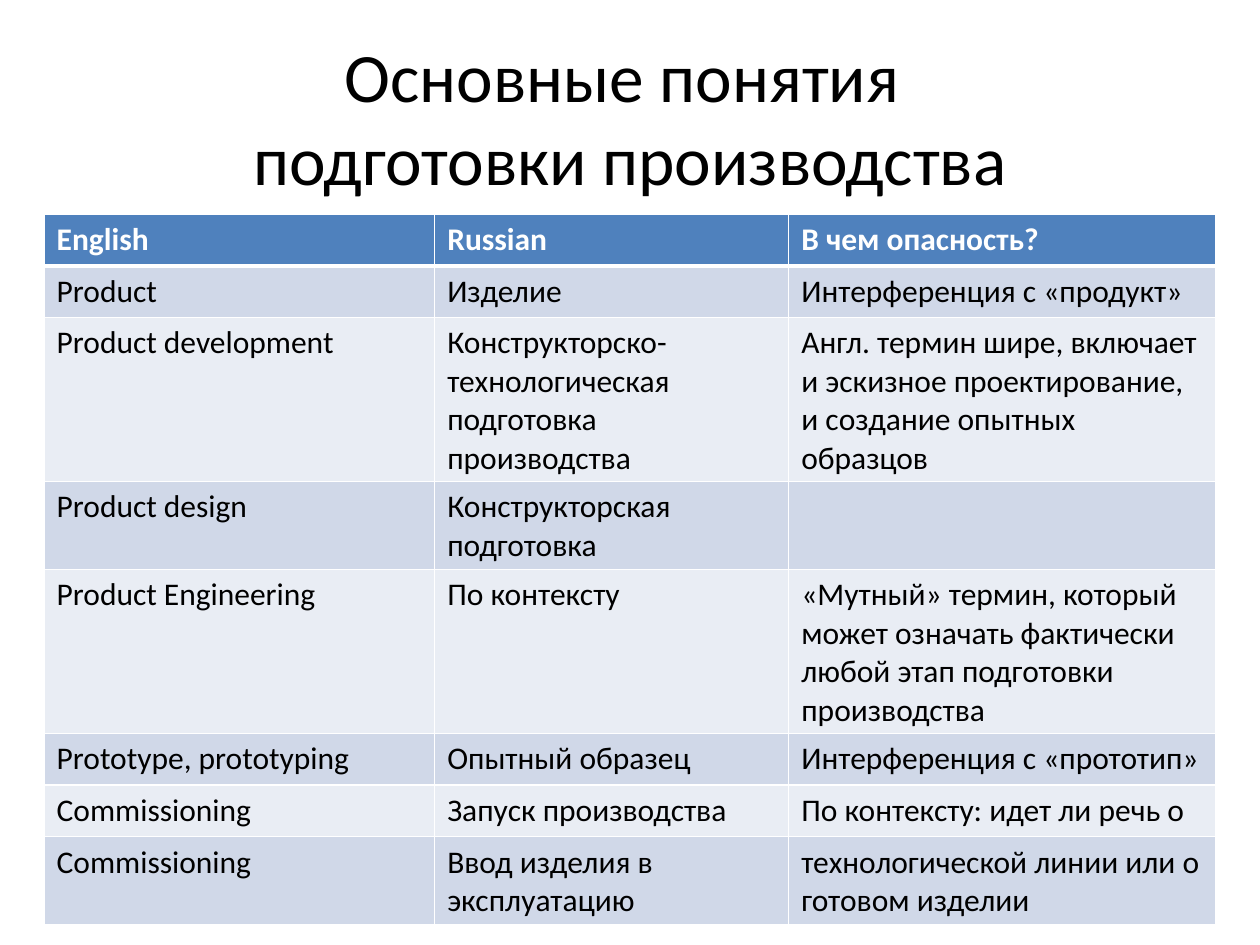
from lxml import etree
from pptx import Presentation
from pptx import util as u
from pptx.dml.color import RGBColor
from pptx.enum import text
from pptx.oxml import ns


def paint(target, color):
    target.solid()
    target.fore_color.rgb = RGBColor.from_string(color)


def style(para, color, **formats):
    para.font.name = "Calibri"
    paint(para.font.fill, color)
    for name, value in formats.items():
        setattr(para.font, name, value)


deck = Presentation()
deck.slide_width = u.Inches(10)
deck.slide_height = u.Inches(7.5)
page = deck.slides.add_slide(deck.slide_layouts[6])

box = page.shapes.add_textbox(u.Inches(0.5), u.Inches(0.3), u.Inches(9), u.Inches(1.25))
frame = box.text_frame
frame.word_wrap = True
frame.vertical_anchor = text.MSO_ANCHOR.MIDDLE
title = frame.paragraphs[0]
title.text = "Основные понятия \vподготовки производства"
title.alignment = text.PP_ALIGN.CENTER
style(title, "000000", size=u.Pt(39.6))

terms = [
    ("English", "Russian", "В чем опасность?"),
    ("Product", "Изделие", "Интерференция с «продукт»"),
    ("Product development", "Конструкторско-технологическая подготовка производства",
     "Англ. термин шире, включает и эскизное проектирование, и создание опытных образцов"),
    ("Product design", "Конструкторская подготовка", ""),
    ("Product Engineering", "По контексту",
     "«Мутный» термин, который может означать фактически любой этап подготовки производства"),
    ("Prototype, prototyping", "Опытный образец", "Интерференция с «прототип»"),
    ("Commissioning", "Запуск производства", "По контексту: идет ли речь о"),
    ("Commissioning", "Ввод изделия в эксплуатацию",
     "технологической линии или о готовом изделии"),
]
widths = [3.1, 2.81, 3.39]
row_height = 0.41

table = page.shapes.add_table(
    len(terms), len(widths), u.Inches(0.35), u.Inches(1.7),
    u.Inches(sum(widths)), u.Inches(row_height * len(terms)),
).table
for column, width in zip(table.columns, widths):
    column.width = u.Inches(width)

for row, entries in enumerate(terms):
    table.rows[row].height = u.Inches(row_height)
    header = row == 0
    fill = "4F81BD" if header else ("E9EDF4", "D0D8E8")[row % 2]
    for col, entry in enumerate(entries):
        cell = table.cell(row, col)
        properties = cell._tc.get_or_add_tcPr()
        borders = {
            "a:lnL": 1,
            "a:lnR": 1,
            "a:lnT": 3 if row == 1 else 1,
            "a:lnB": 3 if header else 1,
        }
        for side, weight in borders.items():
            line = etree.SubElement(properties, ns.qn(side), w=str(u.Pt(weight)))
            solid = etree.SubElement(line, ns.qn("a:solidFill"))
            etree.SubElement(solid, ns.qn("a:srgbClr"), val="FFFFFF")
        paint(cell.fill, fill)
        para = cell.text_frame.paragraphs[0]
        para.text = entry
        style(para, "FFFFFF" if header else "000000", size=u.Pt(18), bold=header)

deck.save("out.pptx")
